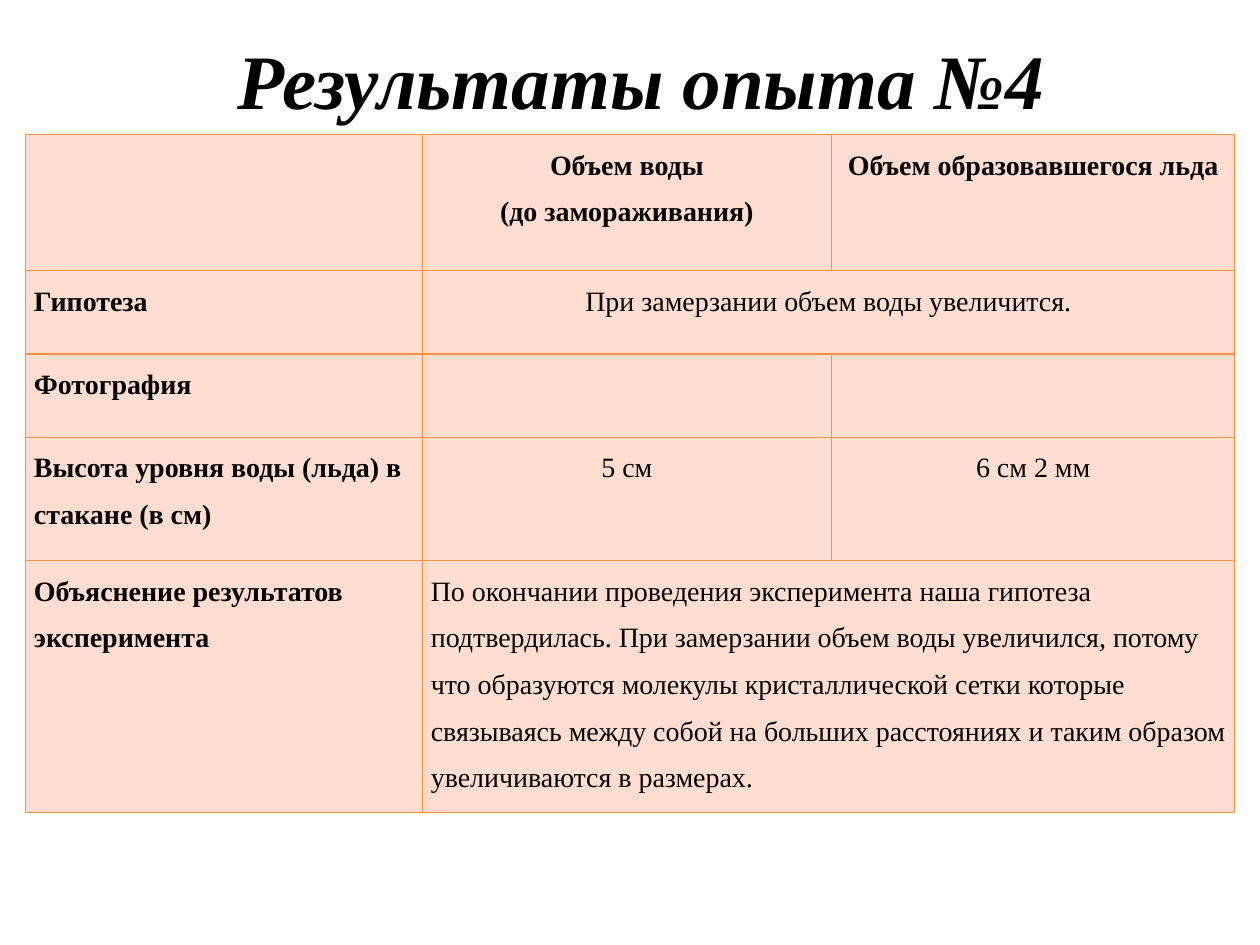
"""Build the slide with the results table of experiment no. 4."""
from dataclasses import dataclass

from lxml import etree
from pptx import Presentation
from pptx.dml.color import RGBColor
from pptx.enum.text import MSO_ANCHOR, PP_ALIGN
from pptx.oxml.ns import qn
from pptx.slide import Slide
from pptx.table import Table, _Cell
from pptx.text.text import _Paragraph
from pptx.util import Inches, Pt

LEFT, CENTER = PP_ALIGN.LEFT, PP_ALIGN.CENTER
MIDDLE = MSO_ANCHOR.MIDDLE
BLACK = RGBColor(0x00, 0x00, 0x00)
PEACH = RGBColor(0xFF, 0xDD, 0xD0)
ORANGE = RGBColor(0xF6, 0x92, 0x40)
FONT = "Times New Roman"
COLUMN_WIDTHS = (3.15, 3.25, 3.2)
ROW_HEIGHTS = (1.08, 0.66, 0.66, 0.98, 1.32)
BORDER_SIDES = ("a:lnL", "a:lnR", "a:lnT", "a:lnB")


@dataclass(frozen=True)
class Entry:
    """Text of one table cell and its place in the grid."""

    row: int
    column: int
    text: str
    bold: bool = True
    alignment: PP_ALIGN = LEFT
    columns: int = 1


ENTRIES = (
    Entry(0, 1, "Объем воды\n(до замораживания)", alignment=CENTER),
    Entry(0, 2, "Объем образовавшегося льда", alignment=CENTER),
    Entry(1, 0, "Гипотеза"),
    Entry(1, 1, "При замерзании объем воды увеличится.", False, CENTER, 2),
    Entry(2, 0, "Фотография"),
    Entry(3, 0, "Высота уровня воды (льда) в стакане (в см)"),
    Entry(3, 1, "5 см", False, CENTER),
    Entry(3, 2, "6 см 2 мм", False, CENTER),
    Entry(4, 0, "Объяснение результатов эксперимента"),
    Entry(
        4, 1,
        "По окончании проведения эксперимента наша гипотеза подтвердилась. "
        "При замерзании объем воды увеличился, потому что образуются молекулы "
        "кристаллической сетки которые связываясь между собой на больших "
        "расстояниях и таким образом увеличиваются в размерах.",
        False, LEFT, 2,
    ),
)


def style_paragraph(paragraph: _Paragraph, size: int, bold: bool, alignment: PP_ALIGN) -> None:
    """Set the alignment and font of a paragraph."""
    paragraph.alignment = alignment
    paragraph.font.name = FONT
    paragraph.font.size = Pt(size)
    paragraph.font.bold = bold
    paragraph.font.color.rgb = BLACK


def style_cell(cell: _Cell) -> None:
    """Give a cell its margins, borders and fill."""
    cell.margin_left = cell.margin_right = Inches(0.07)
    cell.margin_top = cell.margin_bottom = 0
    properties = cell._tc.get_or_add_tcPr()
    for side in BORDER_SIDES:
        line = etree.SubElement(properties, qn(side), w=str(Pt(0.75)))
        fill = etree.SubElement(line, qn("a:solidFill"))
        etree.SubElement(fill, qn("a:srgbClr"), val=str(ORANGE))
    cell.fill.solid()
    cell.fill.fore_color.rgb = PEACH


def fill_entry(table: Table, entry: Entry) -> None:
    """Write an entry into its cell, merging columns where it spans them."""
    cell = table.cell(entry.row, entry.column)
    if entry.columns > 1:
        cell.merge(table.cell(entry.row, entry.column + entry.columns - 1))
    cell.text = entry.text
    for paragraph in cell.text_frame.paragraphs:
        style_paragraph(paragraph, 16, entry.bold, entry.alignment)
        paragraph.line_spacing = 1.5


def add_title(slide: Slide, text: str) -> None:
    """Add the slide heading."""
    shape = slide.shapes.add_textbox(Inches(0.59), 0, Inches(9), Inches(1.25))
    frame = shape.text_frame
    frame.word_wrap = True
    frame.vertical_anchor = MIDDLE
    paragraph = frame.paragraphs[0]
    paragraph.text = text
    style_paragraph(paragraph, 44, True, CENTER)
    paragraph.font.italic = True


def add_results(slide: Slide) -> None:
    """Add the results table."""
    table = slide.shapes.add_table(
        len(ROW_HEIGHTS), len(COLUMN_WIDTHS), Inches(0.2), Inches(1.07),
        Inches(sum(COLUMN_WIDTHS)), Inches(sum(ROW_HEIGHTS)),
    ).table
    table.first_row = table.horz_banding = False
    for column, width in zip(table.columns, COLUMN_WIDTHS):
        column.width = Inches(width)
    for row, height in zip(table.rows, ROW_HEIGHTS):
        row.height = Inches(height)
    for cell in table.iter_cells():
        style_cell(cell)
    for entry in ENTRIES:
        fill_entry(table, entry)


def main() -> None:
    """Create and save the presentation."""
    presentation = Presentation()
    presentation.slide_width = Inches(10)
    presentation.slide_height = Inches(7.5)
    slide = presentation.slides.add_slide(presentation.slide_layouts[6])
    add_title(slide, "Результаты опыта №4")
    add_results(slide)
    presentation.save("out.pptx")


if __name__ == "__main__":
    main()
